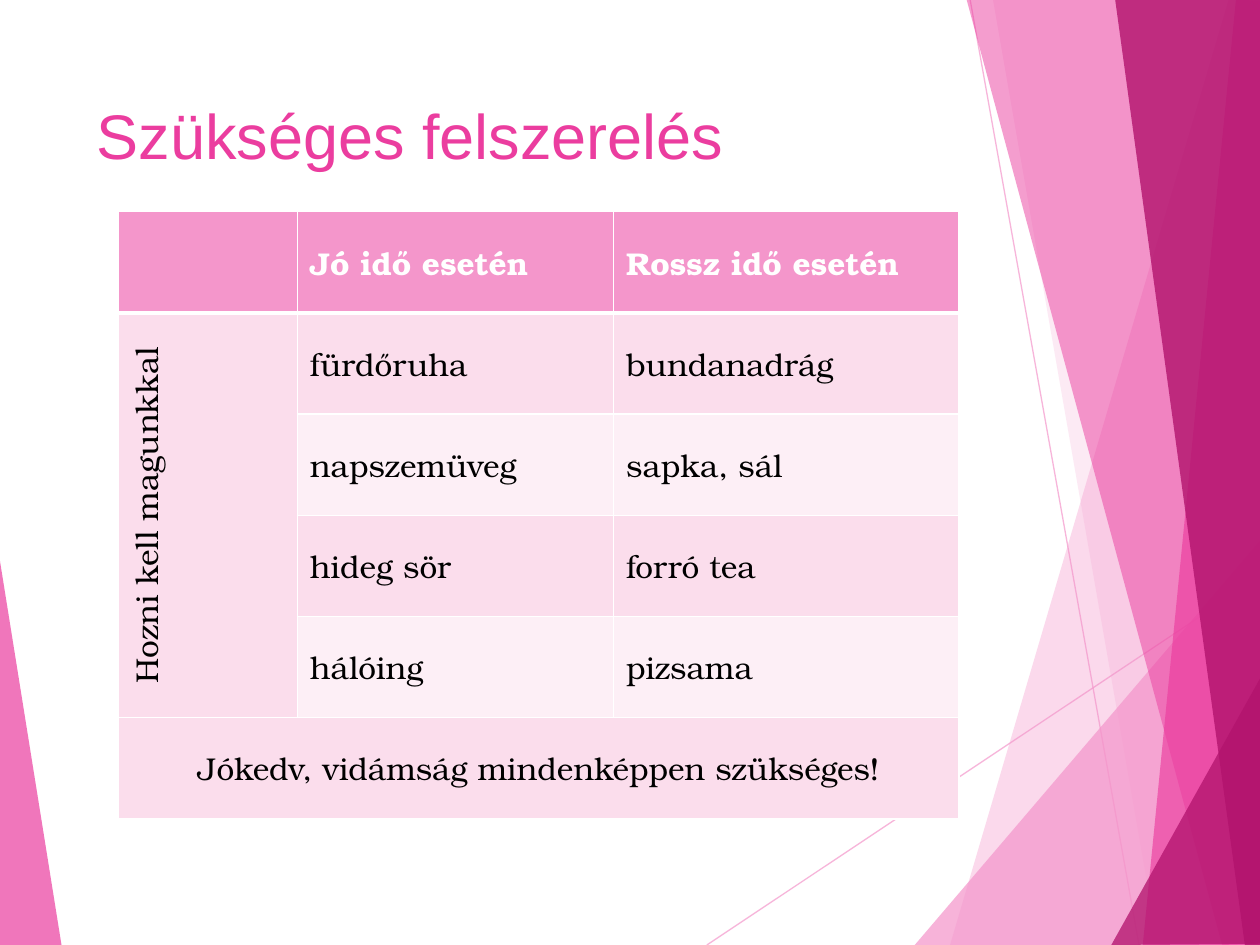
from lxml import etree
from pptx import Presentation
from pptx import util as u
from pptx.dml.color import RGBColor
from pptx.enum import shapes, text
from pptx.oxml.ns import qn

Inches, Pt = u.Inches, u.Pt
COLORS = {"white": "FFFFFF", "black": "000000", "light": "F496CB", "pink": "EB3D9F",
          "dark": "B2136D", "band1": "FBDDEC", "band2": "FDEFF6"}
TITLE_FONT, BODY_FONT = "Arial", "TeX Gyre Bonum"

# Slanted facets: colour, opacity in percent, corner points in inches
FACETS = [
    ("light", 36, [(9.75, 0), (7.54, 7.5), (10.02, 7.51), (10.01, 0.01)]),
    ("light", 20, [(7.88, -0.01), (9.19, 7.5), (10.01, 7.5), (10.01, -0.01)]),
    ("light", 72, [(7.26, 7.5), (10, 4.29), (10.01, 7.5)]),
    ("pink", 50, [(7.67, -0.01), (9.7, 7.5), (10.01, 7.49), (10.01, -0.01)]),
    ("pink", 66, [(9.81, -0.01), (9.07, 7.5), (10.01, 7.5), (10, -0.01)]),
    ("dark", 80, [(8.85, -0.01), (9.88, 7.5), (10.02, 7.5), (10, -0.01)]),
    ("dark", 76, [(8.82, 7.5), (10.02, 5.35), (10.02, 7.49)]),
    ("pink", 70, [(-0.01, 4.39), (0.49, 7.51), (-0.01, 7.5)]),
]
RAYS = [((5.61, 7.5), (10.01, 4.57)), ((7.7, 0), (9.04, 7.5))]

HEADER = ["", "Jó idő esetén", "Rossz idő esetén"]
SIDE_LABEL = "Hozni kell magunkkal"
ITEMS = [("fürdőruha", "bundanadrág"), ("napszemüveg", "sapka, sál"),
         ("hideg sör", "forró tea"), ("hálóing", "pizsama")]
FOOTER = "Jókedv, vidámság mindenképpen szükséges!"
COL_WIDTHS = [1.42, 2.51, 2.74]


def rgb(name):
    return RGBColor.from_string(COLORS[name])


def set_opacity(fill_parent, percent):
    for color in fill_parent.iter(qn("a:srgbClr")):
        etree.SubElement(color, qn("a:alpha")).set("val", str(percent * 1000))


def add_run(p, content, font, size, color, bold=False):
    r = p.add_run()
    r.text = content
    r.font.name, r.font.size, r.font.bold = font, Pt(size), bold
    r.font.color.rgb = rgb(color)


def add_decoration(s, left, top):
    """Draw the rays and facets with the slide frame's corner at left, top."""
    def place(point):
        return left + Inches(point[0]), top + Inches(point[1])

    for start, end in RAYS:
        ray = s.shapes.add_connector(shapes.MSO_CONNECTOR.STRAIGHT, *place(start), *place(end))
        ray.line.color.rgb = rgb("light")
        ray.line.width = Pt(0.75)
        sp_pr = ray._element.spPr
        set_opacity(sp_pr, 70)
        etree.SubElement(sp_pr, qn("a:effectLst"))
    for color, opacity, points in FACETS:
        corners = [place(point) for point in points]
        builder = s.shapes.build_freeform(*corners[0])
        builder.add_line_segments(corners[1:], close=True)
        facet = builder.convert_to_shape()
        facet.shadow.inherit = False
        facet.fill.solid()
        facet.fill.fore_color.rgb = rgb(color)
        set_opacity(facet._element.spPr, opacity)
        facet.line.fill.background()


def add_title(s, left, top, width, height):
    tf = s.shapes.add_textbox(left, top, width, height).text_frame
    tf.word_wrap = True
    tf.vertical_anchor = text.MSO_ANCHOR.TOP
    tf.margin_top = Inches(0.1)
    add_run(tf.paragraphs[0], "Szükséges felszerelés", TITLE_FONT, 36, "pink")


def set_borders(cell, bottom):
    tc_pr = cell._tc.get_or_add_tcPr()
    for side, width in (("L", 1), ("R", 1), ("T", 1), ("B", bottom)):
        ln = etree.SubElement(tc_pr, qn(f"a:ln{side}"), w=str(Pt(width)))
        fill = etree.SubElement(ln, qn("a:solidFill"))
        etree.SubElement(fill, qn("a:srgbClr"), val=COLORS["white"])


def add_equipment_table(s, left, top, width, height):
    rows = [HEADER] + [("", *pair) for pair in ITEMS] + [(FOOTER, "", "")]
    last = len(rows) - 1
    table = s.shapes.add_table(len(rows), len(HEADER), left, top, width, height).table
    for column, share in zip(table.columns, COL_WIDTHS):
        column.width = int(width * share / sum(COL_WIDTHS))
    for i, row in enumerate(rows):
        table.rows[i].height = int(height / len(rows))
        header = i == 0
        band = "light" if header else "band1" if i % 2 else "band2"
        for j, content in enumerate(row):
            cell = table.cell(i, j)
            set_borders(cell, 3 if header else 1)
            cell.fill.solid()
            cell.fill.fore_color.rgb = rgb(band)
            cell.vertical_anchor = text.MSO_ANCHOR.MIDDLE
            if content:
                add_run(cell.text_frame.paragraphs[0], content, BODY_FONT, 18,
                        "white" if header else "black", header)

    side, footer = table.cell(1, 0), table.cell(last, 0)
    side.merge(table.cell(last - 1, 0))
    footer.merge(table.cell(last, len(HEADER) - 1))
    add_run(side.text_frame.paragraphs[0], SIDE_LABEL, BODY_FONT, 18, "black")
    side._tc.get_or_add_tcPr().set("vert", "vert270")
    for cell in (side, footer):
        cell.text_frame.paragraphs[0].alignment = text.PP_ALIGN.CENTER


def main():
    prs = Presentation()
    prs.slide_width, prs.slide_height = Inches(10), Inches(7.5)
    s = prs.slides.add_slide(prs.slide_layouts[6])
    s.background.fill.solid()
    s.background.fill.fore_color.rgb = rgb("white")
    add_decoration(s, Inches(0), Inches(0))
    add_title(s, Inches(0.67), Inches(0.67), Inches(6.94), Inches(1.44))
    add_equipment_table(s, Inches(0.94), Inches(1.68), Inches(6.67), Inches(4.82))
    prs.save("out.pptx")


if __name__ == "__main__":
    main()
